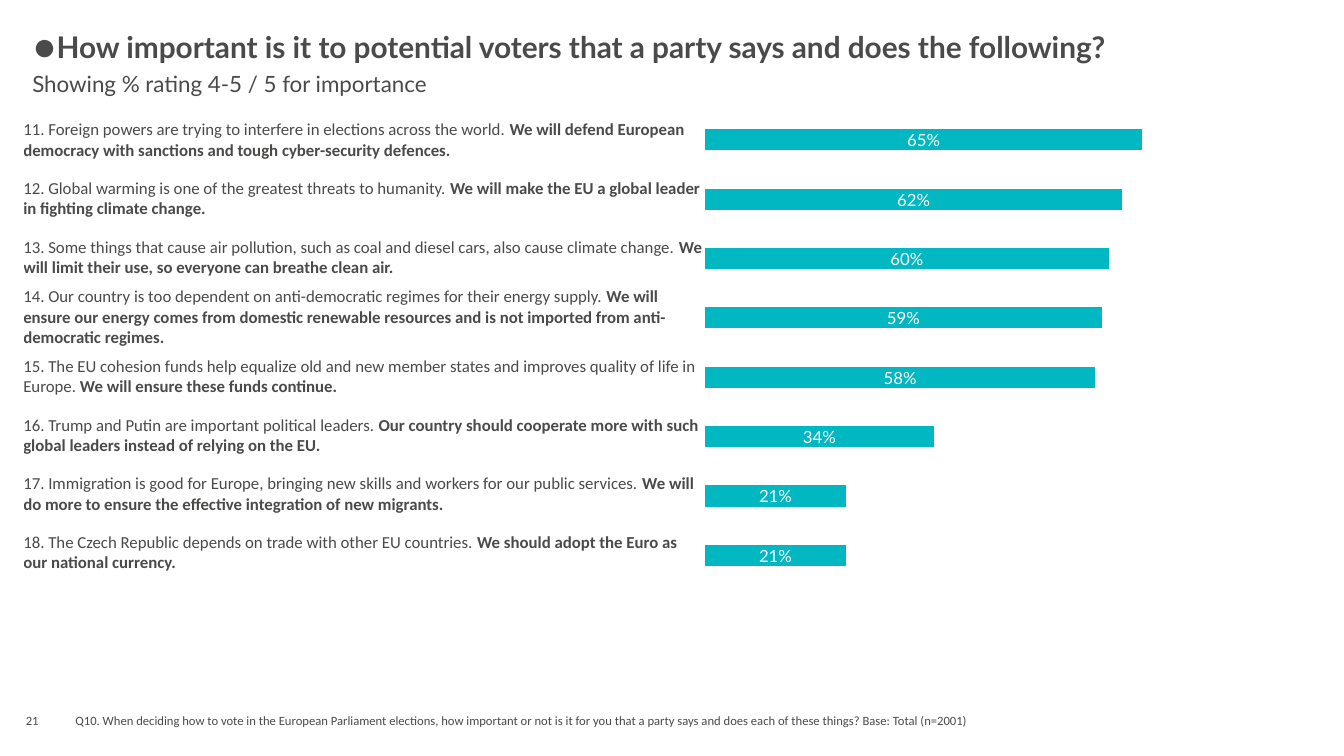
import pptx
import pptx.chart.data
import pptx.dml.color
import pptx.enum.chart
import pptx.enum.text
import pptx.util
import lxml.etree

INK, GREY, TEAL, WHITE = "4A4A4A", "4A4A49", "00B7C2", "FFFFFF"
ALIGN = pptx.enum.text.PP_ALIGN
ANCHOR = pptx.enum.text.MSO_ANCHOR

# Lead, pledge and share of 4-5 ratings
ITEMS = [
    ("11. Foreign powers are trying to interfere in elections across the world. ",
     "We will defend European democracy with sanctions and tough cyber-security defences.", 65),
    ("12. Global warming is one of the greatest threats to humanity. ",
     "We will make the EU a global leader in fighting climate change.", 62),
    ("13. Some things that cause air pollution, such as coal and diesel cars, also cause climate change. ",
     "We will limit their use, so everyone can breathe clean air.", 60),
    ("14. Our country is too dependent on anti-democratic regimes for their energy supply. ",
     "We will ensure our energy comes from domestic renewable resources and is not imported "
     "from anti-democratic regimes.", 59),
    ("15. The EU cohesion funds help equalize old and new member states and improves quality of life in Europe. ",
     "We will ensure these funds continue.", 58),
    ("16. Trump and Putin are important political leaders. ",
     "Our country should cooperate more with such global leaders instead of relying on the EU.", 34),
    ("17. Immigration is good for Europe, bringing new skills and workers for our public services. ",
     "We will do more to ensure the effective integration of new migrants.", 21),
    ("18. The Czech Republic depends on trade with other EU countries. ",
     "We should adopt the Euro as our national currency.", 21),
]


def tint(code):
    return pptx.dml.color.RGBColor.from_string(code)


def style(font, size, face, color, bold=False):
    font.size, font.name, font.bold = pptx.util.Pt(size), face, bold
    font.color.rgb = tint(color)


def write(frame, *texts, size=12, face="Calibri", color=GREY, bolds=(False, True),
          align=ALIGN.LEFT, anchor=ANCHOR.TOP):
    """Fill a frame with one paragraph, one run per text."""
    frame.word_wrap = True
    frame.vertical_anchor = anchor
    para = frame.paragraphs[0]
    para.alignment = align
    for text, bold in zip(texts, bolds):
        run = para.add_run()
        run.text = text
        style(run.font, size, face, color, bold)
    return para


def node(parent, tag, **attrs):
    return lxml.etree.SubElement(parent, pptx.oxml.ns.qn(tag), attrs)


class Page:
    def __init__(self, deck):
        self.wide, self.high = deck.slide_width, deck.slide_height
        self.slide = deck.slides.add_slide(deck.slide_layouts[5])

    def place(self, x, y, w, h):
        """Turn percent shares of the slide into lengths."""
        return [round(share * side / 100) for share, side in
                zip((x, y, w, h), (self.wide, self.high) * 2)]

    def title(self, text, box):
        shape = self.slide.shapes.title
        shape.left, shape.top, shape.width, shape.height = self.place(*box)
        para = write(shape.text_frame, text, size=21.3, face="Lato", color=INK, bolds=[True])
        shape.text_frame.auto_size = pptx.enum.text.MSO_AUTO_SIZE.NONE
        # Round bullet hanging left of the text
        props = para._p.get_or_add_pPr()
        props.set("marL", "0")
        props.set("indent", str(-pptx.util.Inches(0.3)))
        node(props, "a:buSzPct", val="136000")
        node(props, "a:buFont", typeface="Arial")
        node(props, "a:buChar", char="●")
        para.line_spacing = 0.8

    def label(self, text, box, side=None, **form):
        frame = self.slide.shapes.add_textbox(*self.place(*box)).text_frame
        if side is not None:
            frame.margin_left = frame.margin_right = side
        write(frame, text, **form)

    def table(self, rows, box):
        grid = self.slide.shapes.add_table(len(rows), 1, *self.place(*box)).table
        grid.first_row = grid.horz_banding = False
        for cell, texts in zip(grid.iter_cells(), rows):
            cell.fill.background()
            cell.margin_left = cell.margin_right = cell.margin_top = cell.margin_bottom = 0
            write(cell.text_frame, *texts)
            cell.vertical_anchor = ANCHOR.MIDDLE

    def bars(self, values, box):
        data = pptx.chart.data.CategoryChartData(number_format='0"%"')
        data.categories = [str(n) for n in range(1, len(values) + 1)]
        data.add_series("Series 1", values)
        kind = pptx.enum.chart.XL_CHART_TYPE.BAR_STACKED
        chart = self.slide.shapes.add_chart(kind, *self.place(*box), data).chart
        chart.has_legend = chart.has_title = False
        style(chart.font, 10, "Lato", GREY)

        # Hidden axes, first item on top
        chart.category_axis.reverse_order = True
        scale = chart.value_axis
        scale.minimum_scale, scale.maximum_scale = 0, 100
        scale.has_major_gridlines = False
        chart.category_axis.visible = scale.visible = False

        # Bars and their labels
        plot = chart.plots[0]
        plot.gap_width, plot.overlap, plot.vary_by_categories = 182, 100, False
        fill = plot.series[0].format.fill
        fill.solid()
        fill.fore_color.rgb = tint(TEAL)
        plot.has_data_labels = True
        labels = plot.data_labels
        labels.show_value = True
        labels.number_format, labels.number_format_is_linked = '0"%"', False
        labels.position = pptx.enum.chart.XL_LABEL_POSITION.CENTER
        style(labels.font, 12, "Lato", WHITE)

        # Plot area across the full chart width
        area = chart._chartSpace.chart.plotArea
        for old in area.findall(pptx.oxml.ns.qn("c:layout")):
            area.remove(old)
        frame = node(area, "c:layout")
        area.insert(0, frame)
        inner = node(frame, "c:manualLayout")
        for tag, val in (("layoutTarget", "inner"), ("xMode", "edge"), ("yMode", "edge"),
                         ("x", "0"), ("y", "0.025"), ("w", "1"), ("h", "0.95")):
            node(inner, "c:" + tag, val=val)


def main():
    deck = pptx.Presentation()
    deck.slide_width, deck.slide_height = pptx.util.Inches(13.33), pptx.util.Inches(7.5)
    page = Page(deck)

    # Heading
    page.title("How important is it to potential voters that a party says and does the following?",
               (1.65, 4, 93.62, 12.53))

    # Footer
    page.label("21", (0.75, 92.67, 3.3, 5.33), size=9, align=ALIGN.CENTER, anchor=ANCHOR.MIDDLE)
    page.label("Q10. When deciding how to vote in the European Parliament elections, how important "
               "or not is it for you that a party says and does each of these things? "
               "Base: Total (n=2001)", (4.88, 92.67, 90.4, 5.33), size=9, anchor=ANCHOR.MIDDLE)

    # Ratings beside the statements
    page.bars([value for _, _, value in ITEMS], (52.44, 12.93, 50.11, 66.13))
    page.table([texts for *texts, _ in ITEMS], (1.73, 14.67, 50.64, 62.13))

    # Subtitle
    page.label("Showing % rating 4-5 / 5 for importance", (2.4, 8.67, 59.34, 4.93),
               side=0, size=16, face="Lato")
    deck.save("out.pptx")


if __name__ == "__main__":
    main()
